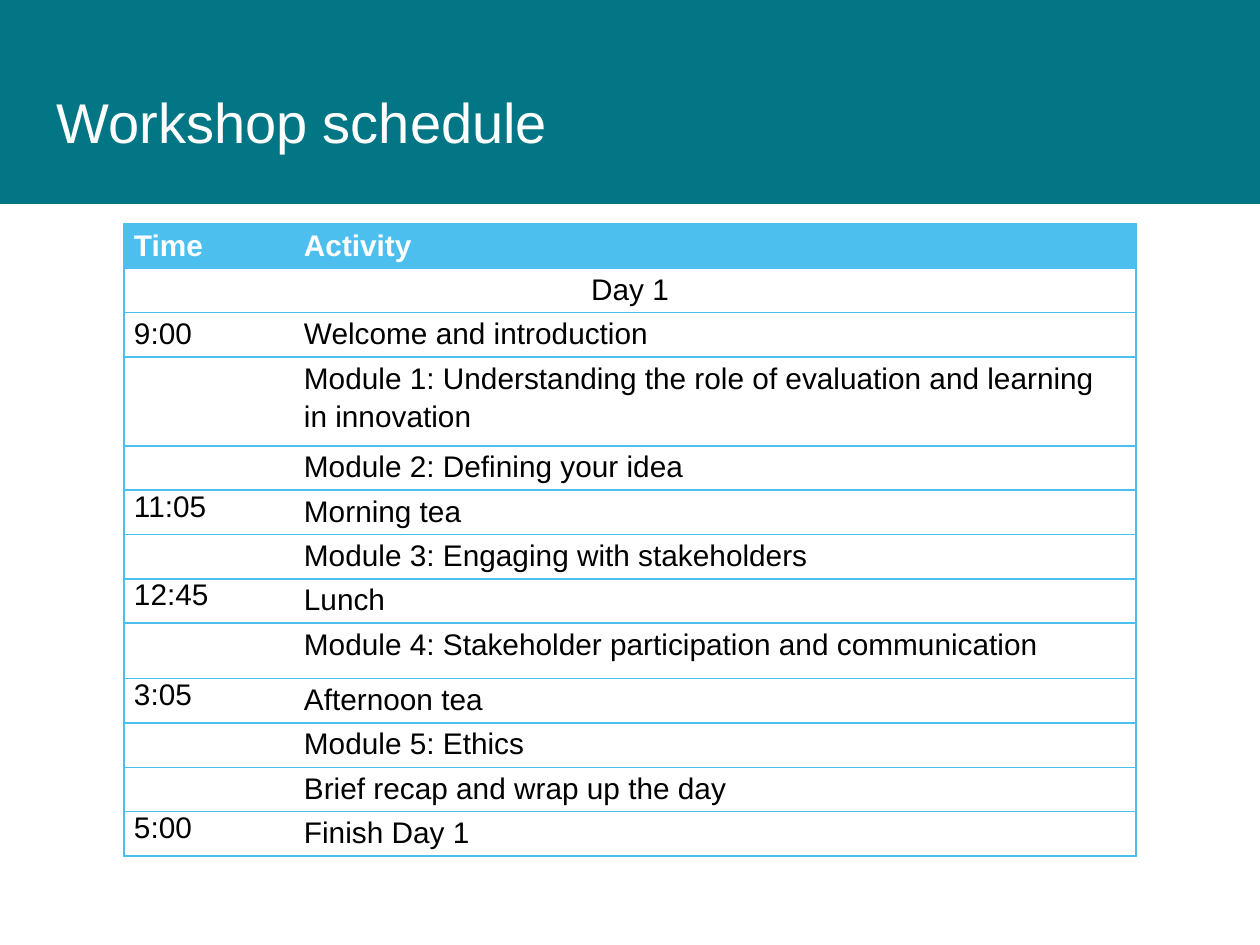
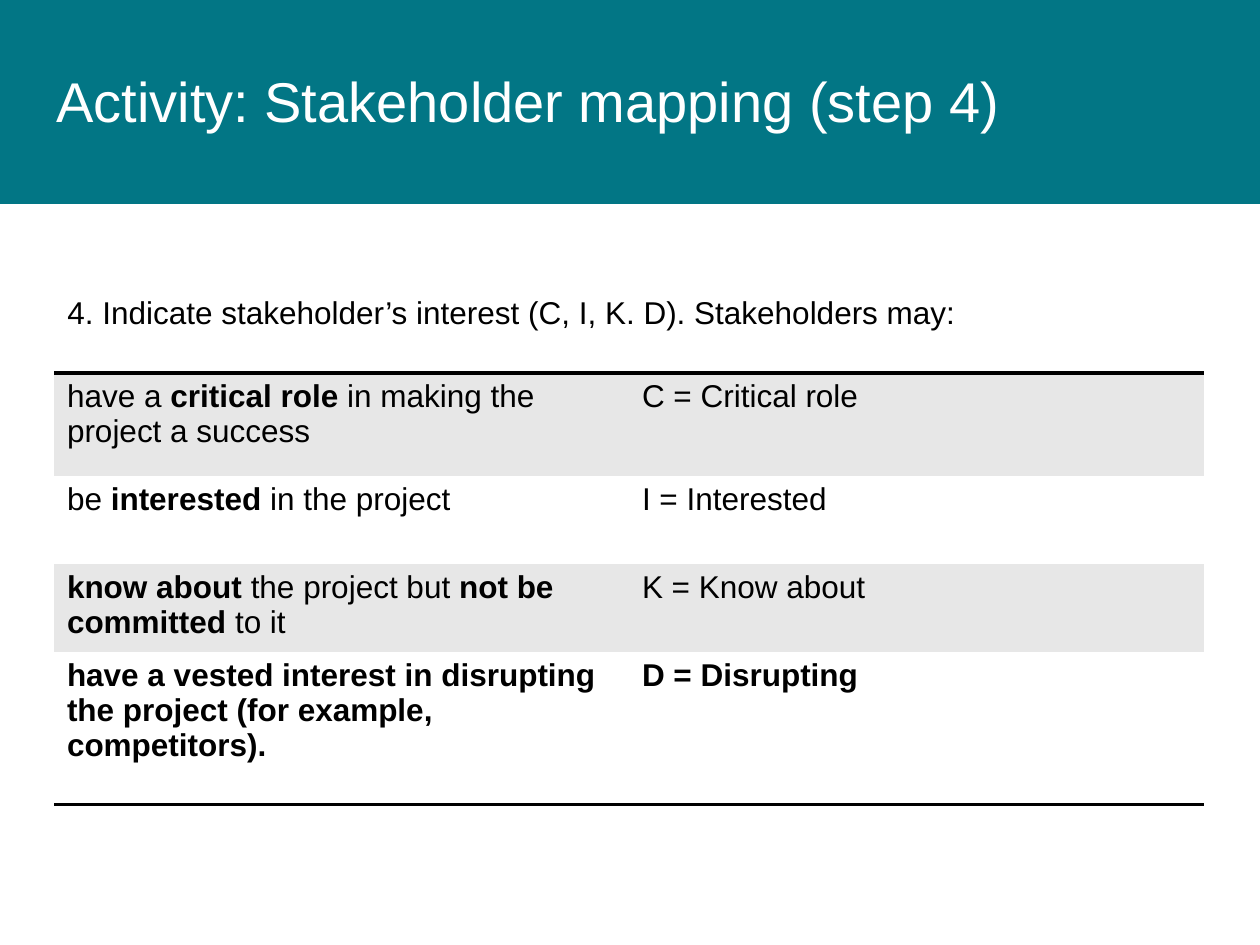
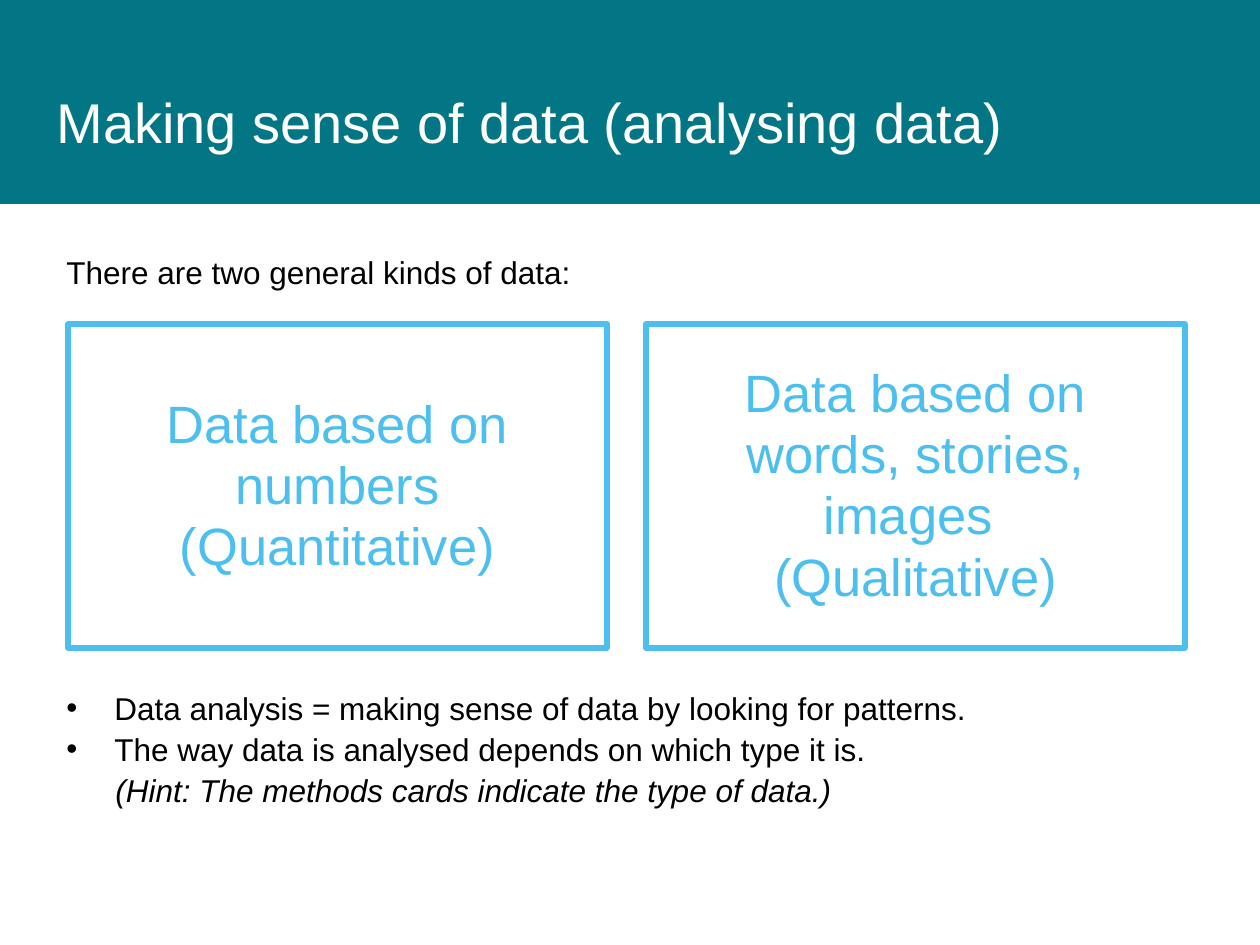
"""Build three workshop slides: a schedule, a stakeholder key and kinds of data."""
from dataclasses import dataclass
from typing import Optional, Sequence

from lxml import etree
from pptx import Presentation, slide as s, table as t
from pptx import util as u
from pptx.dml.color import RGBColor
from pptx.enum import shapes, text
from pptx.oxml.ns import qn

EMU_PER_PX = 914400 / 126


@dataclass(frozen=True)
class Theme:
    font: str = "Arial"
    teal: str = "027685"
    sky: str = "4CBFEE"
    grey: str = "E7E7E7"
    white: str = "FFFFFF"
    black: str = "000000"
    title_size: int = 32
    card_size: int = 30
    body_size: int = 18
    schedule_size: int = 17
    body_spacing: float = 1.08
    card_spacing: float = 0.97
    schedule_spacing: float = 1.15


THEME = Theme()


@dataclass(frozen=True)
class Frame:
    left: int
    top: int
    width: int
    height: int

    def emu(self) -> tuple[u.Emu, ...]:
        return tuple(px(side) for side in (self.left, self.top, self.width, self.height))


@dataclass(frozen=True)
class Para:
    """Words between asterisks are bold; a line feed is a line break."""
    words: str
    size: int = THEME.body_size
    color: str = THEME.black
    spacing: float = THEME.body_spacing
    align: text.PP_ALIGN = text.PP_ALIGN.LEFT
    italic: bool = False
    indent: int = 0
    bullet: str = ""


@dataclass(frozen=True)
class Border:
    color: str
    points: int
    sides: str


@dataclass(frozen=True)
class CellStyle:
    inset_x: int
    inset_y: int
    border: Border
    fill: Optional[str] = None


@dataclass(frozen=True)
class Session:
    time: str
    activity: str
    units: float = 1
    time_spacing: float = 1


@dataclass(frozen=True)
class Interest:
    meaning: str
    code: str
    height: int


def px(length: float) -> u.Emu:
    return u.Emu(round(length * EMU_PER_PX))


def rgb(color: str) -> RGBColor:
    return RGBColor.from_string(color)


def write(frame: text, paras: Sequence[Para]) -> None:
    for index, para in enumerate(paras):
        paragraph = frame.add_paragraph() if index else frame.paragraphs[0]
        paragraph.alignment = para.align
        paragraph.line_spacing = para.spacing
        if para.indent:
            properties = paragraph._p.get_or_add_pPr()
            properties.set("marL", str(px(para.indent)))
            properties.set("indent", str(-px(para.indent) if para.bullet else 0))
            if para.bullet:
                etree.SubElement(properties, qn("a:buFont"), typeface=THEME.font)
                etree.SubElement(properties, qn("a:buChar"), char=para.bullet)
        font = paragraph.font
        font.name, font.size = THEME.font, u.Pt(para.size)
        font.color.rgb = rgb(para.color)
        font.italic = para.italic
        for number, line in enumerate(para.words.split("\n")):
            if number:
                paragraph.add_line_break()
            for order, words in enumerate(line.split("*")):
                if words:
                    span = paragraph.add_run()
                    span.text = words
                    span.font.bold = order % 2 == 1


def add_text(page: s.Slide, frame: Frame, *paras: Para) -> None:
    box = page.shapes.add_textbox(*frame.emu())
    box.text_frame.word_wrap = True
    write(box.text_frame, paras)


def add_panel(page: s.Slide, frame: Frame, fill: str, line: Optional[str] = None):
    panel = page.shapes.add_shape(shapes.MSO_SHAPE.RECTANGLE, *frame.emu())
    panel.shadow.inherit = False
    panel.fill.solid()
    panel.fill.fore_color.rgb = rgb(fill)
    if line:
        panel.line.color.rgb = rgb(line)
        panel.line.width = u.Pt(3)
    else:
        panel.line.fill.background()
    return panel


def add_page(deck, title: str, title_top: int = 76) -> s.Slide:
    page = deck.slides.add_slide(deck.slide_layouts[6])
    add_panel(page, Frame(0, 0, 1260, 204), THEME.teal)
    add_text(page, Frame(44, title_top, 1134, 127),
             Para(title, THEME.title_size, THEME.white))
    return page


def add_grid(page: s.Slide, left: int, top: int, widths: Sequence[float],
             heights: Sequence[float]) -> t.Table:
    frame = Frame(left, top, round(sum(widths)), round(sum(heights)))
    grid = page.shapes.add_table(len(heights), len(widths), *frame.emu()).table
    grid.first_row = grid.horz_banding = False
    for column, width in zip(grid.columns, widths):
        column.width = px(width)
    for row, height in zip(grid.rows, heights):
        row.height = px(height)
    return grid


def fill_cell(cell: t._Cell, para: Para, style: CellStyle) -> None:
    cell.margin_left = cell.margin_right = px(style.inset_x)
    cell.margin_top = cell.margin_bottom = px(style.inset_y)
    if style.fill:
        cell.fill.solid()
        cell.fill.fore_color.rgb = rgb(style.fill)
    else:
        cell.fill.background()
    properties = cell._tc.get_or_add_tcPr()
    for position, side in enumerate("LRTB"):
        edge = etree.Element(qn(f"a:ln{side}"))
        if side in style.border.sides:
            edge.set("w", str(u.Pt(style.border.points)))
            solid = etree.SubElement(edge, qn("a:solidFill"))
            etree.SubElement(solid, qn("a:srgbClr"), val=style.border.color)
        else:
            etree.SubElement(edge, qn("a:noFill"))
        properties.insert(position, edge)
    write(cell.text_frame, [para])


def build_schedule(deck) -> None:
    page = add_page(deck, "Workshop schedule")
    wide = THEME.schedule_spacing
    sessions = [
        Session("*Time*", "*Activity*", time_spacing=wide),
        Session("Day 1", "", time_spacing=wide),
        Session("9:00", "Welcome and introduction", time_spacing=wide),
        Session("", "Module 1: Understanding the role of evaluation and learning in innovation", 2),
        Session("", "Module 2: Defining your idea"),
        Session("11:05", "Morning tea"),
        Session("", "Module 3: Engaging with stakeholders"),
        Session("12:45", "Lunch"),
        Session("", "Module 4: Stakeholder participation and communication", 1.25),
        Session("3:05", "Afternoon tea"),
        Session("", "Module 5: Ethics"),
        Session("", "Brief recap and wrap up the day"),
        Session("5:00", "Finish Day 1"),
    ]
    unit = 632 / sum(session.units for session in sessions)
    grid = add_grid(page, 124, 224, [170, 842], [session.units * unit for session in sessions])
    day_row = 1
    grid.cell(day_row, 0).merge(grid.cell(day_row, 1))
    for row, session in enumerate(sessions):
        header = row == 0
        color = THEME.white if header else THEME.black
        align = text.PP_ALIGN.CENTER if row == day_row else text.PP_ALIGN.LEFT
        columns = [(session.time, session.time_spacing, "LRTB" if row == day_row else "LTB"),
                   (session.activity, wide, "RTB")]
        for column, (words, spacing, sides) in enumerate(columns):
            style = CellStyle(10, 0, Border(THEME.sky, 1, sides), THEME.sky if header else None)
            para = Para(words, THEME.schedule_size, color, spacing, align)
            fill_cell(grid.cell(row, column), para, style)


def build_mapping(deck) -> None:
    page = add_page(deck, "Activity: Stakeholder mapping (step 4)", 55)
    add_text(page, Frame(55, 284, 1134, 69),
             Para("4. Indicate stakeholder’s interest (C, I, K. D). Stakeholders may:"))
    interests = [
        Interest("have a *critical role* in making the project a success", "C = Critical role", 103),
        Interest("be *interested *in the project", "I = Interested", 88),
        Interest("*know about *the project but *not be committed* to it", "K = Know about", 88),
        Interest("*have a vested interest in disrupting the project (for example, competitors).*",
                 "*D = Disrupting*", 153),
    ]
    grid = add_grid(page, 54, 373, [575, 575], [interest.height for interest in interests])
    edges = {0: "T", len(interests) - 1: "B"}
    for row, interest in enumerate(interests):
        fill = THEME.white if row % 2 else THEME.grey
        style = CellStyle(13, 6, Border(THEME.black, 2, edges.get(row, "")), fill)
        for column, words in enumerate((interest.meaning, interest.code)):
            fill_cell(grid.cell(row, column), Para(words, spacing=1), style)


def build_data_kinds(deck) -> None:
    page = add_page(deck, "Making sense of data (analysing data)")
    kinds = ["Data based on numbers (Quantitative)",
             "Data based on words, stories, images \n(Qualitative)"]
    for index, kind in enumerate(kinds):
        card = add_panel(page, Frame(68 + 578 * index, 324, 539, 324), THEME.white, THEME.sky)
        frame = card.text_frame
        frame.word_wrap = True
        frame.vertical_anchor = text.MSO_ANCHOR.MIDDLE
        frame.margin_left = frame.margin_right = px(15)
        frame.margin_top = frame.margin_bottom = px(15)
        write(frame, [Para(kind, THEME.card_size, THEME.sky, THEME.card_spacing,
                           text.PP_ALIGN.CENTER)])
    add_text(page, Frame(54, 244, 1062, 50), Para("There are two general kinds of data:"))
    add_text(page, Frame(54, 680, 1111, 170),
             Para("Data analysis = making sense of data by looking for patterns.",
                  indent=48, bullet="•"),
             Para("The way data is analysed depends on which type it is.", indent=48, bullet="•"),
             Para("(Hint: The methods cards indicate the type of data.)", indent=49, italic=True))


def main() -> None:
    deck = Presentation()
    deck.slide_width, deck.slide_height = px(1260), px(945)
    build_schedule(deck)
    build_mapping(deck)
    build_data_kinds(deck)
    deck.save("out.pptx")


if __name__ == "__main__":
    main()
